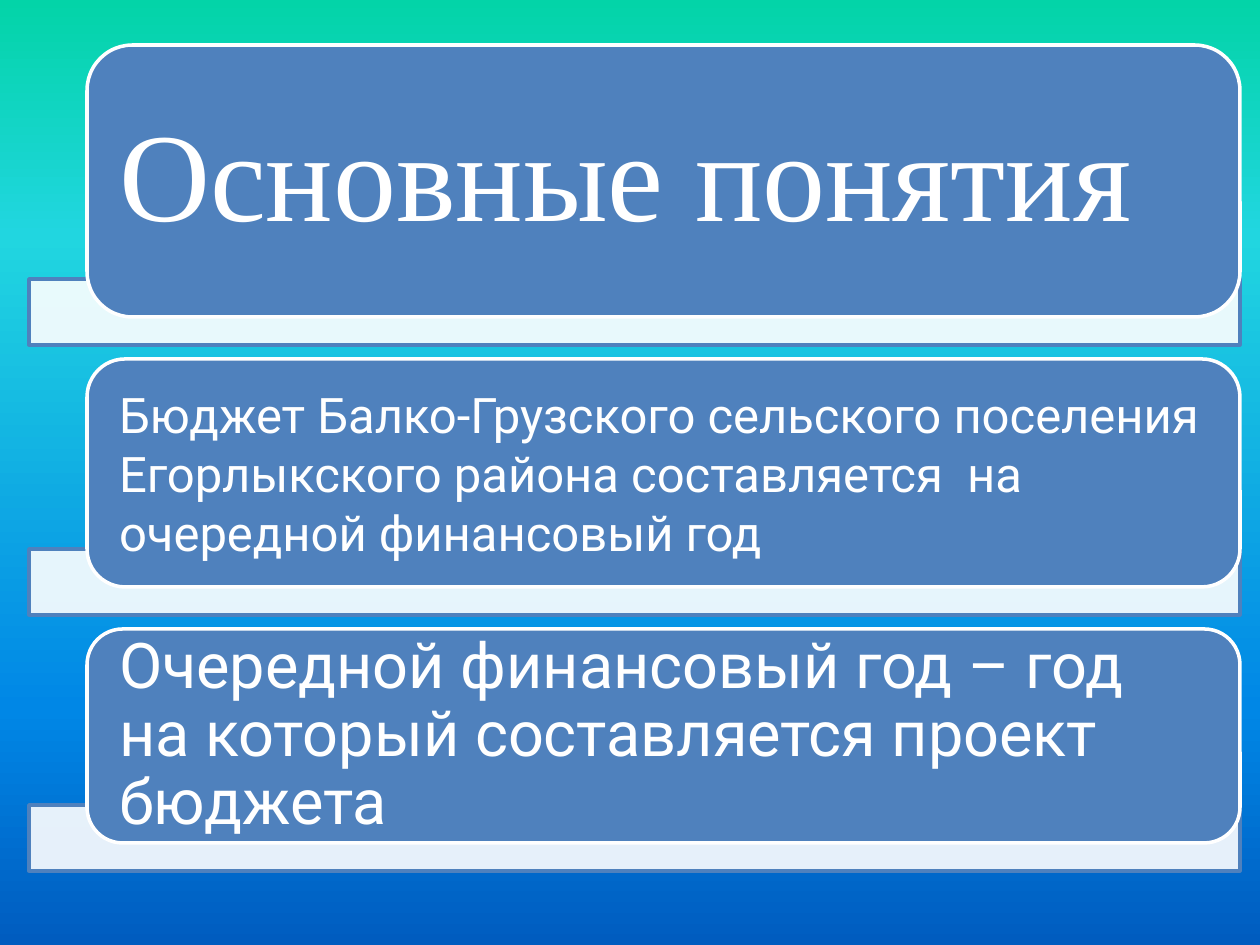
import pptx
import pptx.dml.color
import pptx.enum.shapes
import pptx.enum.text
import pptx.oxml
import pptx.oxml.ns
import pptx.util
from lxml import etree

RGBColor = pptx.dml.color.RGBColor
MSO_SHAPE = pptx.enum.shapes.MSO_SHAPE

WHITE = RGBColor(0xFF, 0xFF, 0xFF)
BLUE = RGBColor(0x4F, 0x81, 0xBD)
BACKGROUND_STOPS = [
    (0, RGBColor(0x03, 0xD4, 0xA8)),
    (25, RGBColor(0x21, 0xD6, 0xE0)),
    (75, RGBColor(0x00, 0x87, 0xE6)),
    (100, RGBColor(0x00, 0x5C, 0xBF)),
]

CARDS = [
    ("Основные понятия", 272, 72, "Times New Roman", 0.9),
    ("Бюджет Балко-Грузского сельского поселения Егорлыкского района "
     "составляется  на очередной финансовый год", 228, 28, "Roboto", 1.0),
    ("Очередной финансовый год – год на который составляется проект бюджета",
     214, 36, "Roboto", 0.9),
]

PX = 914400 / 126
FIRST_TOP = 45
CARD_LEFT, CARD_WIDTH = 87, 1153
BAR_LEFT, BAR_WIDTH, BAR_HEIGHT = 29, 1211, 66
BAR_OVERLAP = 38
GAP = 14
TEXT_INSET = 32
CORNER_RATIO = 0.1667
CORNER_TEXT_INSET = 0.29


def px(value):
    return pptx.util.Emu(round(value * PX))


def paint_background(slide):
    fill = slide.background.fill
    fill.gradient()
    fill.gradient_angle = 270
    stop_list = slide.background._cSld.find(".//" + pptx.oxml.ns.qn("a:gsLst"))
    for stop in list(stop_list):
        stop_list.remove(stop)
    for position, color in BACKGROUND_STOPS:
        stop = etree.SubElement(stop_list, pptx.oxml.ns.qn("a:gs"), pos=str(position * 1000))
        etree.SubElement(stop, pptx.oxml.ns.qn("a:srgbClr"), val=str(color))


def add_box(slide, kind, left, top, width, height, fill_color, line_color):
    shape = slide.shapes.add_shape(kind, px(left), px(top), px(width), px(height))
    shape.shadow.inherit = False
    shape.fill.solid()
    shape.fill.fore_color.rgb = fill_color
    shape.line.color.rgb = line_color
    shape.line.width = pptx.util.Pt(2)
    return shape


def add_bar(slide, top):
    bar = add_box(slide, MSO_SHAPE.RECTANGLE, BAR_LEFT, top, BAR_WIDTH, BAR_HEIGHT, WHITE, BLUE)
    color = bar._element.spPr.find(
        pptx.oxml.ns.qn("a:solidFill") + "/" + pptx.oxml.ns.qn("a:srgbClr"))
    etree.SubElement(color, pptx.oxml.ns.qn("a:alpha"), val="90000")


def add_card(slide, top, height, text, size, font_name, line_spacing):
    card = add_box(slide, MSO_SHAPE.ROUNDED_RECTANGLE, CARD_LEFT, top, CARD_WIDTH, height,
                   BLUE, WHITE)
    card.adjustments[0] = CORNER_RATIO
    text_frame = card.text_frame
    text_frame.text = text
    text_frame.word_wrap = True
    text_frame.vertical_anchor = pptx.enum.text.MSO_ANCHOR.MIDDLE
    margin = px(TEXT_INSET - CORNER_TEXT_INSET * CORNER_RATIO * height)
    text_frame.margin_left = text_frame.margin_right = margin
    text_frame.margin_top = text_frame.margin_bottom = 0
    paragraph = text_frame.paragraphs[0]
    paragraph.alignment = pptx.enum.text.PP_ALIGN.LEFT
    paragraph.line_spacing = line_spacing
    font = paragraph.runs[0].font
    font.size = pptx.util.Pt(size)
    font.name = font_name
    font.color.rgb = WHITE


def main():
    presentation = pptx.Presentation()
    presentation.slide_width = px(1260)
    presentation.slide_height = px(945)
    slide = presentation.slides.add_slide(presentation.slide_layouts[6])
    paint_background(slide)
    top = FIRST_TOP
    for text, height, size, font_name, line_spacing in CARDS:
        bar_top = top + height - BAR_OVERLAP
        add_bar(slide, bar_top)
        add_card(slide, top, height, text, size, font_name, line_spacing)
        top = bar_top + BAR_HEIGHT + GAP
    presentation.save("out.pptx")


if __name__ == "__main__":
    main()
